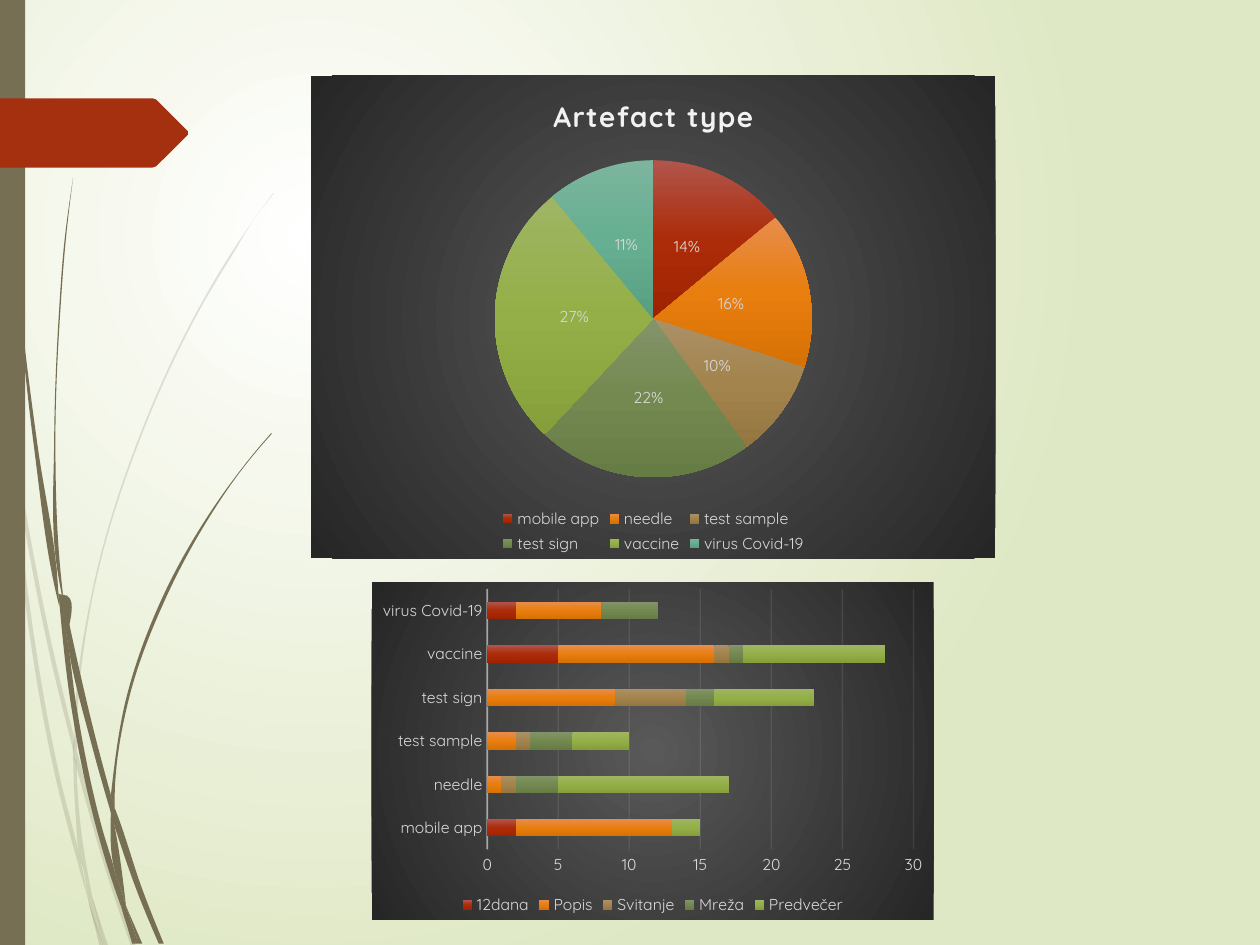
"""Build a slide with a pie chart above a stacked bar chart, beside a stalk motif."""
from dataclasses import dataclass
from math import dist

from lxml.etree import SubElement as Sub
from pptx import Presentation
from pptx.chart.data import CategoryChartData as Data
from pptx.dml.color import RGBColor
from pptx.enum.chart import XL_CHART_TYPE as Kind
from pptx.enum.chart import XL_LABEL_POSITION as Spot
from pptx.enum.chart import XL_LEGEND_POSITION as Side
from pptx.enum.chart import XL_TICK_MARK as Tick
from pptx.enum.shapes import MSO_SHAPE as Preset
from pptx.oxml import parse_xml
from pptx.oxml.ns import nsdecls, qn
from pptx.util import Cm, Pt

FONT = "Quicksand"
BARK = RGBColor(0x76, 0x6F, 0x54)
RUST = RGBColor(0xA5, 0x30, 0x10)
WHITE = RGBColor(0xFF, 0xFF, 0xFF)
LIME = RGBColor(0xDF, 0xE8, 0xC4)
GREY = RGBColor(0xD9, 0xD9, 0xD9)
PALE = RGBColor(0xF2, 0xF2, 0xF2)
BLACK = RGBColor(0, 0, 0)
SLATE = [RGBColor(0x59, 0x59, 0x59), RGBColor(0x26, 0x26, 0x26)]
HUES = [[RGBColor.from_string(code) for code in row.split()] for row in (
    "B1554C AC2C09 A02301", "E78D4D E87E0E D77104", "AB9168 A3844D 947641",
    "83946A 738950 667C45", "9FB565 94AF47 869F3B", "7CB59D 67AF92 589F82")]
CATS = ["mobile app", "needle", "test sample", "test sign", "vaccine", "virus Covid-19"]
PAPERS = {
    "12dana": [2, 0, 0, 0, 5, 2],
    "Popis": [11, 1, 2, 9, 11, 6],
    "Svitanje": [0, 1, 1, 5, 1, 0],
    "Mreža": [0, 3, 3, 2, 1, 4],
    "Predvečer": [2, 12, 4, 7, 10, 0],
}
SHARES = {"Series 1": [14, 16, 10, 22, 27, 11]}


@dataclass
class Blade:
    """One piece of a stalk: its two edges, in hundredths of an inch."""
    left: list
    right: list


@dataclass
class Panel:
    """A chart's kind, place in inches and values."""
    kind: Kind
    box: tuple
    rows: dict


BACK = [
    Blade([(0, 282), (6, 322), (8, 350)], [(0, 299), (7, 344), (8, 350)]),
    Blade([(10, 345), (43, 520), (59, 586)], [(12, 376), (40, 522), (59, 599)]),
    Blade([(61, 596), (64, 607), (88, 692), (108, 751)], [(61, 610), (85, 694), (104, 751)]),
    Blade([(73, 711), (86, 751)], [(73, 711), (83, 751)]),
    Blade([(8, 350), (19, 470), (45, 621), (64, 693), (70, 714)],
          [(8, 350), (12, 376), (22, 469), (48, 619), (64, 683), (70, 714)]),
    Blade([(58, 599), (60, 646), (64, 683), (67, 692), (73, 711)],
          [(58, 599), (61, 608), (61, 610), (63, 646), (73, 711)]),
    Blade([(59, 586), (59, 584), (75, 461), (110, 348), (158, 244), (186, 197), (201, 175), (217, 153)],
          [(61, 596), (61, 584), (76, 462), (111, 349), (159, 245), (187, 198), (201, 175), (217, 154)]),
    Blade([(70, 714), (79, 751)], [(70, 714), (82, 751)]),
    Blade([(59, 586), (58, 599), (61, 608)], [(59, 586), (61, 596), (61, 610)]),
    Blade([(65, 683), (69, 707), (70, 714), (82, 751)], [(65, 683), (67, 692), (73, 711), (83, 751)]),
]
FRONT = [
    Blade([(2, 0), (3, 48), (5, 110), (14, 233), (27, 355), (46, 477), (47, 481)],
          [(3, 0), (4, 48), (6, 109), (15, 232), (30, 355), (45, 453), (47, 481)]),
    Blade([(50, 472), (53, 505), (73, 592), (88, 645)], [(50, 472), (77, 590), (88, 631)]),
    Blade([(91, 641), (94, 649), (113, 706), (130, 749)], [(91, 656), (109, 708), (126, 749)]),
    Blade([(47, 477), (56, 557), (77, 659), (92, 708), (97, 722)],
          [(47, 477), (53, 505), (60, 556), (81, 657), (91, 691), (97, 722)]),
    Blade([(58, 141), (51, 193), (47, 245), (43, 349), (45, 449), (49, 472)],
          [(58, 141), (52, 193), (48, 245), (44, 349), (48, 453), (50, 472)]),
    Blade([(100, 719), (110, 749)], [(100, 719), (113, 749)]),
    Blade([(45, 449), (45, 453), (47, 477), (53, 505)], [(45, 449), (49, 472), (50, 472), (53, 505)]),
    Blade([(215, 344), (203, 358), (191, 373), (168, 405), (129, 474), (101, 551), (88, 631)],
          [(216, 344), (203, 359), (191, 374), (169, 406), (131, 476), (103, 552), (91, 633), (91, 641)]),
    Blade([(97, 722), (105, 749)], [(97, 722), (108, 749)]),
    Blade([(88, 645), (91, 691), (96, 706), (100, 719)], [(88, 645), (90, 651), (91, 656), (100, 719)]),
    Blade([(88, 631), (88, 645), (91, 656)], [(88, 631), (91, 641), (91, 656)]),
    Blade([(91, 691), (96, 717), (97, 722), (108, 749)], [(91, 691), (96, 706), (100, 719), (110, 749)]),
]
ARROW = [(0, 78), (121, 78), (124, 79), (149, 104), (149, 107), (124, 132), (121, 133), (0, 133)]


def inch(size: float) -> Cm:
    return Cm(size * 2.54)


def blend(hues: list, focus: tuple = ()):
    grad = parse_xml(f'<a:gradFill {nsdecls("a")} rotWithShape="1"/>')
    stops = Sub(grad, qn("a:gsLst"))
    for i, hue in enumerate(hues):
        stop = Sub(stops, qn("a:gs"), pos=str(100000 * i // (len(hues) - 1)))
        Sub(stop, qn("a:srgbClr"), val=str(hue))
    if focus:
        ring = Sub(grad, qn("a:path"), path="circle")
        edges = {side: str(part * 1000) for side, part in zip("ltrb", focus)}
        Sub(ring, qn("a:fillToRect"), **edges)
    else:
        Sub(grad, qn("a:lin"), ang="5400000", scaled="0")
    return grad


def shade(fill, hues: list, focus: tuple = ()) -> None:
    fill.solid()
    old = fill._xPr.find(qn("a:solidFill"))
    fill._xPr.replace(old, blend(hues, focus))


def tint(fill, hue: RGBColor, alpha: int = 100) -> None:
    fill.solid()
    fill.fore_color.rgb = hue
    if alpha < 100:
        Sub(fill._xPr.find(".//" + qn("a:srgbClr")), qn("a:alpha"), val=str(alpha * 1000))


def finish(shape, hue: RGBColor, alpha: int = 100) -> None:
    shape.shadow.inherit = False
    tint(shape.fill, hue, alpha)
    shape.line.fill.background()


def outline(shapes, knots: list, hue: RGBColor, alpha: int = 100):
    spots = [(inch(x / 100), inch(y / 100)) for x, y in knots]
    pen = shapes.build_freeform(*spots[0])
    pen.add_line_segments(spots[1:], close=True)
    shape = pen.convert_to_shape()
    finish(shape, hue, alpha)
    return shape


def bends(knots: list) -> list:
    """Give the two handles of each smooth link between knots."""
    if len(knots) < 3:
        return [()]
    gaps = [dist(p, q) for p, q in zip(knots, knots[1:])]
    pace = [[(b - a) / gap for a, b in zip(p, q)] for p, q, gap in zip(knots, knots[1:], gaps)]
    lean = [[(a * n + b * m) / (m + n) for a, b in zip(u, v)]
            for u, v, m, n in zip(pace, pace[1:], gaps, gaps[1:])]
    first, last = ([1.5 * a - b / 2 for a, b in zip(pace[i], lean[i])] for i in (0, -1))
    lean = [first, *lean, last]
    return [([a + u * gap / 3 for a, u in zip(p, s)], [b - v * gap / 3 for b, v in zip(q, t)])
            for p, q, s, t, gap in zip(knots, knots[1:], lean, lean[1:], gaps)]


def stalks(slide, blades: list, alpha: int) -> None:
    group = slide.shapes.add_group_shape()
    for blade in blades:
        back = blade.right[::-1]
        joined = blade.left[-1] == back[0]
        shape = outline(group.shapes, blade.left + back[joined:], BARK, alpha)
        links = bends(blade.left) + [()] * (not joined) + bends(back)
        for line, link in zip(list(shape._element.iter(qn("a:lnTo"))), links):
            if link:
                line.tag = qn("a:cubicBezTo")
                for i, (x, y) in enumerate(link):
                    spot = Sub(line, qn("a:pt"), x=str(inch(x / 100) - shape.left), y=str(inch(y / 100) - shape.top))
                    line.insert(i, spot)


def style(font, size: float, hue: RGBColor) -> None:
    font.name, font.size, font.color.rgb = FONT, Pt(size), hue


def plot(slide, panel: Panel):
    data = Data()
    data.categories = CATS
    for name, vals in panel.rows.items():
        data.add_series(name, vals)
    chart = slide.shapes.add_chart(panel.kind, *map(inch, panel.box), data).chart
    style(chart.font, 10, BLACK)
    frame = parse_xml(f'<c:spPr {nsdecls("c", "a")}/>')
    frame.append(blend(SLATE, (50, 50, 50, 50)))
    Sub(Sub(frame, qn("a:ln")), qn("a:noFill"))
    chart._chartSpace.find(qn("c:chart")).addnext(frame)
    chart.has_title, chart.has_legend = False, True
    chart.legend.position = Side.BOTTOM
    chart.legend.include_in_layout = False
    style(chart.legend.font, 9, GREY)
    return chart


def bars(slide) -> None:
    chart = plot(slide, Panel(Kind.BAR_STACKED, (2.95, 4.62, 4.46, 2.68), PAPERS))
    body = chart.plots[0]
    body.gap_width, body.overlap = 150, 100
    for row, hues in zip(body.series, HUES):
        shade(row.format.fill, hues)
    for axis in (chart.category_axis, chart.value_axis):
        axis.major_tick_mark = axis.minor_tick_mark = Tick.NONE
        style(axis.tick_labels.font, 9, GREY)
    base, scale = chart.category_axis.format.line, chart.value_axis
    scale.format.line.fill.background()
    grid = scale.major_gridlines.format.line
    for line, width, alpha in ((base, 1, 54), (grid, 0.75, 10)):
        line.width = Pt(width)
        tint(line.fill, PALE, alpha)


def pie(slide) -> None:
    chart = plot(slide, Panel(Kind.PIE, (2.47, 0.6, 5.43, 3.83), SHARES))
    head = chart.chart_title.text_frame
    head.text = "Artefact type"
    font = head.paragraphs[0].runs[0].font
    style(font, 16, PALE)
    font.bold = True
    font._rPr.set("spc", "100")
    body = chart.plots[0]
    body.vary_by_categories = body.has_data_labels = True
    for i, hues in enumerate(HUES):
        shade(body.series[0].points[i].format.fill, hues)
    tags = body.data_labels
    tags.show_percentage, tags.show_value = True, False
    tags.number_format, tags.number_format_is_linked = "0%", False
    tags.position = Spot.CENTER
    style(tags.font, 9, GREY)
    chart.has_title = True


def main() -> None:
    deck = Presentation()
    deck.slide_width, deck.slide_height = inch(10), inch(7.5)
    slide = deck.slides.add_slide(deck.slide_layouts[6])
    shade(slide.background.fill, [WHITE, LIME], (50, 50, 100, 100))
    stalks(slide, BACK, 20)
    stalks(slide, FRONT, 100)
    finish(slide.shapes.add_shape(Preset.RECTANGLE, 0, 0, inch(0.2), inch(7.5)), BARK)
    outline(slide.shapes, ARROW, RUST)
    bars(slide)
    pie(slide)
    deck.save("out.pptx")


if __name__ == "__main__":
    main()
